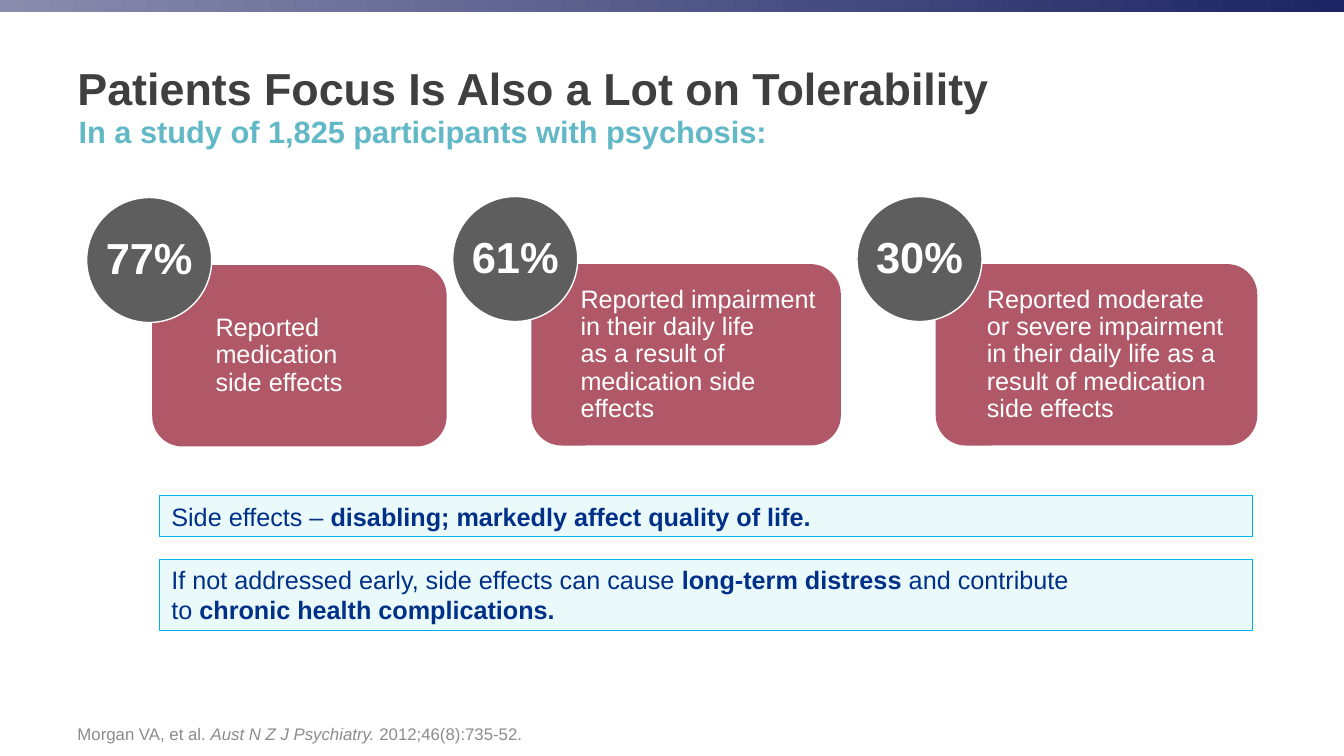
from dataclasses import dataclass

import lxml.etree
import pptx
import pptx.dml.color
import pptx.enum.shapes
import pptx.enum.text
import pptx.oxml.ns
import pptx.shapes.autoshape
import pptx.slide
import pptx.text.text
import pptx.util

Inches = pptx.util.Inches
RGBColor = pptx.dml.color.RGBColor
Shapes = pptx.enum.shapes.MSO_SHAPE
Anchor = pptx.enum.text.MSO_ANCHOR
Align = pptx.enum.text.PP_ALIGN

FONT = "Arial"
WHITE = RGBColor(0xFF, 0xFF, 0xFF)
BAR_START = RGBColor(0x89, 0x8C, 0xAD)
BAR_END = RGBColor(0x1C, 0x24, 0x63)
ROSE = RGBColor(0xA8, 0x46, 0x57)
GRAY = RGBColor(0x5E, 0x5E, 0x5E)
PALE_CYAN = RGBColor(0x98, 0xE9, 0xED)
BRIGHT_BLUE = RGBColor(0x00, 0xB0, 0xF0)
NAVY = RGBColor(0x00, 0x30, 0x87)
TITLE_GRAY = RGBColor(0x3F, 0x3F, 0x3F)
TEAL = RGBColor(0x61, 0xB8, 0xC6)
CITATION_GRAY = RGBColor(0x8C, 0x8C, 0x8C)

CIRCLE_SIZE = 1.24
PANEL_HEIGHT = 1.8
PANEL_DROP = 0.67


@dataclass(frozen=True)
class Fragment:
    text: str
    bold: bool = False
    italic: bool = False


@dataclass(frozen=True)
class Finding:
    percent: str
    statement: str
    circle_left: float
    circle_top: float
    panel_left: float
    panel_width: float
    inset_left: float
    inset_right: float


@dataclass(frozen=True)
class Takeaway:
    top: float
    height: float
    space_before: float
    lines: list[list[Fragment]]


@dataclass(frozen=True)
class Caption:
    box: tuple[float, float, float, float]
    inset_left: float
    anchor: Anchor
    size: float
    color: RGBColor
    fragments: list[Fragment]
    space_before: float = 0


FINDINGS = [
    Finding("77%", "Reported medication\vside effects",
            0.86, 1.96, 1.51, 2.92, 0.54, 0.46),
    Finding("61%", "Reported impairment\vin their daily life\vas a result of\vmedication side effects",
            4.49, 1.95, 5.27, 3.07, 0.4, 0.05),
    Finding("30%", "Reported moderate\vor severe impairment\vin their daily life as a \vresult of medication side effects",
            8.5, 1.95, 9.28, 3.19, 0.42, 0.05),
]

TAKEAWAYS = [
    Takeaway(4.92, 0.4, 6, [
        [Fragment("Side effects – "),
         Fragment("disabling; markedly affect quality of life.", bold=True)],
    ]),
    Takeaway(5.55, 0.71, 0, [
        [Fragment("If not addressed early, side effects can cause "),
         Fragment("long-term distress ", bold=True),
         Fragment("and contribute")],
        [Fragment("to "), Fragment("chronic health complications.", bold=True)],
    ]),
]

CAPTIONS = [
    Caption((0.67, 0.22, 11.75, 1.3), 0.1, Anchor.MIDDLE, 32, TITLE_GRAY,
            [Fragment("Patients Focus Is Also a Lot on Tolerability", bold=True)]),
    Caption((0.78, 1.07, 12, 0.47), 0, Anchor.TOP, 22, TEAL,
            [Fragment("In a study of 1,825 participants with psychosis:", bold=True)], 6),
    Caption((0.67, 6.95, 11.75, 0.48), 0.1, Anchor.BOTTOM, 12, CITATION_GRAY,
            [Fragment("Morgan VA, et al. "),
             Fragment("Aust N Z J Psychiatry.", italic=True),
             Fragment(" 2012;46(8):735-52.")]),
]


def add_block(slide: pptx.slide.Slide, kind: Shapes, left: float, top: float,
              width: float, height: float) -> pptx.shapes.autoshape.Shape:
    block = slide.shapes.add_shape(kind, Inches(left), Inches(top), Inches(width), Inches(height))
    block.shadow.inherit = False
    block.line.fill.background()
    return block


def fill_solid(block: pptx.shapes.autoshape.Shape, color: RGBColor, opacity: int = 100) -> None:
    block.fill.solid()
    block.fill.fore_color.rgb = color
    if opacity < 100:
        qn = pptx.oxml.ns.qn
        tint = block.fill._xPr.find(qn("a:solidFill")).find(qn("a:srgbClr"))
        lxml.etree.SubElement(tint, qn("a:alpha")).set("val", str(opacity * 1000))


def outline(block: pptx.shapes.autoshape.Shape, color: RGBColor, width: float) -> None:
    block.line.color.rgb = color
    block.line.width = pptx.util.Pt(width)


def set_frame(frame: pptx.text.text.TextFrame, anchor: Anchor, left: float, top: float,
              right: float, wrap: bool = True) -> None:
    frame.word_wrap = wrap
    frame.vertical_anchor = anchor
    frame.margin_left, frame.margin_right = Inches(left), Inches(right)
    frame.margin_top = frame.margin_bottom = Inches(top)


def write_lines(frame: pptx.text.text.TextFrame, lines: list[list[Fragment]], size: float,
                color: RGBColor, align: Align = Align.LEFT, spacing: float = 1.0,
                space_before: float = 0) -> None:
    for index, fragments in enumerate(lines):
        paragraph = frame.add_paragraph() if index else frame.paragraphs[0]
        paragraph.alignment = align
        paragraph.line_spacing = spacing
        paragraph.space_before = pptx.util.Pt(space_before)
        for fragment in fragments:
            first_new = len(paragraph.runs)
            pieces = fragment.text.split("\v")
            for position, piece in enumerate(pieces):
                if position:
                    paragraph.add_line_break()
                paragraph.add_run().text = piece
            for run in paragraph.runs[first_new:]:
                run.font.name = FONT
                run.font.size = pptx.util.Pt(size)
                run.font.color.rgb = color
                run.font.bold = fragment.bold
                run.font.italic = fragment.italic


def draw_top_bar(slide: pptx.slide.Slide) -> None:
    bar = add_block(slide, Shapes.RECTANGLE, 0, 0, 13.33, 0.12)
    bar.fill.gradient()
    bar.fill.gradient_angle = 0
    for stop, color in zip(bar.fill.gradient_stops, (BAR_START, BAR_END)):
        stop.color.rgb = color


def draw_finding(slide: pptx.slide.Slide, finding: Finding) -> None:
    panel = add_block(slide, Shapes.ROUNDED_RECTANGLE, finding.panel_left,
                      finding.circle_top + PANEL_DROP, finding.panel_width, PANEL_HEIGHT)
    fill_solid(panel, ROSE, 90)
    set_frame(panel.text_frame, Anchor.MIDDLE, finding.inset_left, 0.05, finding.inset_right)
    write_lines(panel.text_frame, [[Fragment(finding.statement)]], 18, WHITE, spacing=0.9)

    circle = add_block(slide, Shapes.OVAL, finding.circle_left, finding.circle_top,
                       CIRCLE_SIZE, CIRCLE_SIZE)
    fill_solid(circle, GRAY)
    outline(circle, WHITE, 1)
    set_frame(circle.text_frame, Anchor.MIDDLE, 0, 0, 0, wrap=False)
    write_lines(circle.text_frame, [[Fragment(finding.percent, bold=True)]], 31, WHITE,
                Align.CENTER, 0.9)


def draw_takeaway(slide: pptx.slide.Slide, takeaway: Takeaway) -> None:
    banner = add_block(slide, Shapes.RECTANGLE, 1.58, takeaway.top, 10.84, takeaway.height)
    fill_solid(banner, PALE_CYAN, 20)
    outline(banner, BRIGHT_BLUE, 0.75)
    set_frame(banner.text_frame, Anchor.TOP, 0.12, 0.05, 0.1)
    write_lines(banner.text_frame, takeaway.lines, 18, NAVY, space_before=takeaway.space_before)


def draw_caption(slide: pptx.slide.Slide, caption: Caption) -> None:
    frame = slide.shapes.add_textbox(*map(Inches, caption.box)).text_frame
    set_frame(frame, caption.anchor, caption.inset_left, 0.05, 0.1)
    write_lines(frame, [caption.fragments], caption.size, caption.color,
                space_before=caption.space_before)


def main() -> None:
    deck = pptx.Presentation()
    deck.slide_width, deck.slide_height = Inches(13.33), Inches(7.5)
    slide = deck.slides.add_slide(deck.slide_layouts[6])
    draw_top_bar(slide)
    for finding in FINDINGS:
        draw_finding(slide, finding)
    for takeaway in TAKEAWAYS:
        draw_takeaway(slide, takeaway)
    for caption in CAPTIONS:
        draw_caption(slide, caption)
    deck.save("out.pptx")


if __name__ == "__main__":
    main()
